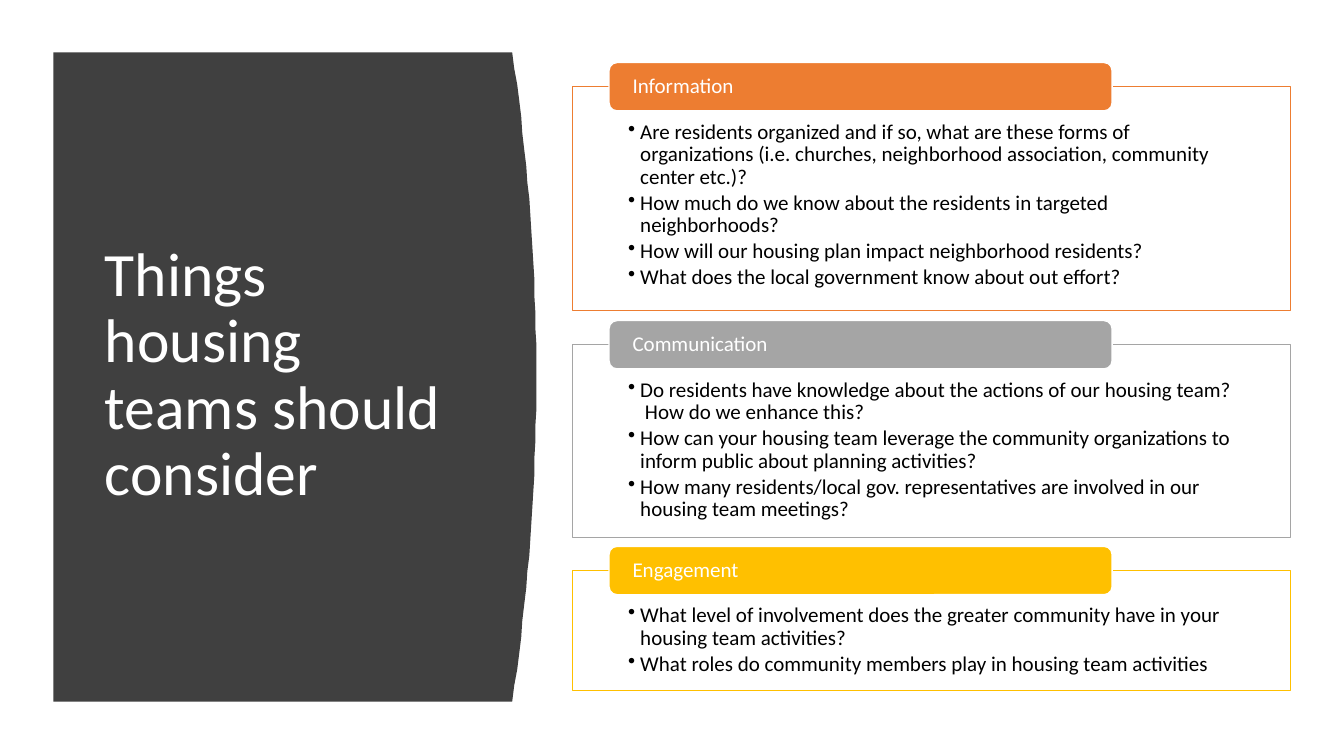
import dataclasses

import lxml.etree
import pptx
import pptx.dml.color
import pptx.enum.shapes
import pptx.enum.text
import pptx.oxml.ns
import pptx.util

EMU_PER_PX = 9144
FONT = "Calibri"
WHITE, BLACK, CHARCOAL = "FFFFFF", "000000", "404040"
FRAME_LEFT, FRAME_WIDTH = 568, 712
LABEL_LEFT, LABEL_WIDTH, LABEL_HEIGHT = 604, 499, 48
LABEL_RISE = 24
BULLET_INDENT = 12
CURVE_STEPS = 40


@dataclasses.dataclass(frozen=True)
class Topic:
    heading: str
    accent: str
    top: int
    height: int
    questions: tuple[str, ...]


TOPICS = (
    Topic("Information", "ED7D31", 86, 222, (
        "Are residents organized and if so, what are these forms of organizations "
        "(i.e. churches, neighborhood association, community center etc.)?",
        "How much do we know about the residents in targeted neighborhoods?",
        "How will our housing plan impact neighborhood residents?",
        "What does the local government know about out effort?",
    )),
    Topic("Communication", "A5A5A5", 342, 191, (
        "Do residents have knowledge about the actions of our housing team? "
        " How do we enhance this?",
        "How can your housing team leverage the community organizations to inform "
        "public about planning activities?",
        "How many residents/local gov. representatives are involved in our housing "
        "team meetings?",
    )),
    Topic("Engagement", "FFC000", 566, 119, (
        "What level of involvement does the greater community have in your housing "
        "team activities?",
        "What roles do community members play in housing team activities",
    )),
)


def px(length: int) -> pptx.util.Emu:
    return pptx.util.Emu(length * EMU_PER_PX)


def colour(hex_value: str) -> pptx.dml.color.RGBColor:
    return pptx.dml.color.RGBColor.from_string(hex_value)


def apply_format(target, values: dict) -> None:
    for attribute, value in values.items():
        setattr(target, attribute, value)


FRAME_FORMAT = {
    "word_wrap": True,
    "vertical_anchor": pptx.enum.text.MSO_ANCHOR.TOP,
    "margin_left": px(55),
    "margin_right": px(55),
    "margin_top": px(34),
    "margin_bottom": px(12),
}
LABEL_FORMAT = {
    "word_wrap": True,
    "vertical_anchor": pptx.enum.text.MSO_ANCHOR.MIDDLE,
    "margin_left": px(21),
    "margin_right": px(21),
    "margin_top": 0,
    "margin_bottom": 0,
}
TITLE_FORMAT = {
    "word_wrap": True,
    "auto_size": pptx.enum.text.MSO_AUTO_SIZE.NONE,
    "vertical_anchor": pptx.enum.text.MSO_ANCHOR.MIDDLE,
}
PARAGRAPH_FORMAT = {
    "alignment": pptx.enum.text.PP_ALIGN.LEFT,
    "line_spacing": 0.9,
}


def write(paragraph, text: str, size: int, ink: str) -> None:
    apply_format(paragraph, PARAGRAPH_FORMAT)
    run = paragraph.add_run()
    run.text = text
    apply_format(run.font, {"name": FONT, "size": pptx.util.Pt(size)})
    run.font.color.rgb = colour(ink)


def paint(shape, fill: str, line: str | None = None) -> None:
    shape.shadow.inherit = False
    shape.fill.solid()
    shape.fill.fore_color.rgb = colour(fill)
    if line is None:
        shape.line.fill.background()
    else:
        shape.line.color.rgb = colour(line)
        shape.line.width = pptx.util.Pt(1)


def add_bullet(paragraph) -> None:
    properties = paragraph._p.get_or_add_pPr()
    properties.set("marL", str(px(BULLET_INDENT)))
    properties.set("indent", str(px(-BULLET_INDENT)))
    bullet = lxml.etree.SubElement(properties, pptx.oxml.ns.qn("a:buChar"))
    bullet.set("char", "•")


def add_panel(slide) -> None:
    left, edge, bulge, top, bottom = 53, 508, 24, 52, 696
    curve = []
    for step in range(CURVE_STEPS + 1):
        share = step / CURVE_STEPS
        x = edge + bulge * 4 * share * (1 - share)
        y = top + (bottom - top) * share
        curve.append((x, y))
    outline = slide.shapes.build_freeform(left, top, scale=EMU_PER_PX)
    outline.add_line_segments([*curve, (left, bottom)], close=True)
    paint(outline.convert_to_shape(), CHARCOAL)


def add_title(slide) -> None:
    title = slide.shapes.title
    apply_format(title, {
        "left": px(94), "top": px(111), "width": px(374), "height": px(524),
    })
    apply_format(title.text_frame, TITLE_FORMAT)
    write(title.text_frame.paragraphs[0],
          "Things housing teams should consider", 44, WHITE)


def add_topic(slide, topic: Topic) -> None:
    frame = slide.shapes.add_shape(
        pptx.enum.shapes.MSO_SHAPE.RECTANGLE,
        px(FRAME_LEFT), px(topic.top), px(FRAME_WIDTH), px(topic.height))
    paint(frame, WHITE, topic.accent)
    apply_format(frame.text_frame, FRAME_FORMAT)
    for index, question in enumerate(topic.questions):
        body = frame.text_frame
        paragraph = body.add_paragraph() if index else body.paragraphs[0]
        apply_format(paragraph, {"level": 1, "space_after": pptx.util.Pt(2.2)})
        write(paragraph, question, 15, BLACK)
        add_bullet(paragraph)

    label = slide.shapes.add_shape(
        pptx.enum.shapes.MSO_SHAPE.ROUNDED_RECTANGLE,
        px(LABEL_LEFT), px(topic.top - LABEL_RISE),
        px(LABEL_WIDTH), px(LABEL_HEIGHT))
    paint(label, topic.accent, WHITE)
    apply_format(label.text_frame, LABEL_FORMAT)
    write(label.text_frame.paragraphs[0], topic.heading, 15, WHITE)


def main() -> None:
    presentation = pptx.Presentation()
    apply_format(presentation, {"slide_width": px(1333), "slide_height": px(750)})
    slide = presentation.slides.add_slide(
        presentation.slide_layouts.get_by_name("Title Only"))
    add_panel(slide)
    title_element = slide.shapes.title._element
    title_element.getparent().append(title_element)
    add_title(slide)
    for topic in TOPICS:
        add_topic(slide, topic)
    presentation.save("out.pptx")


if __name__ == "__main__":
    main()
